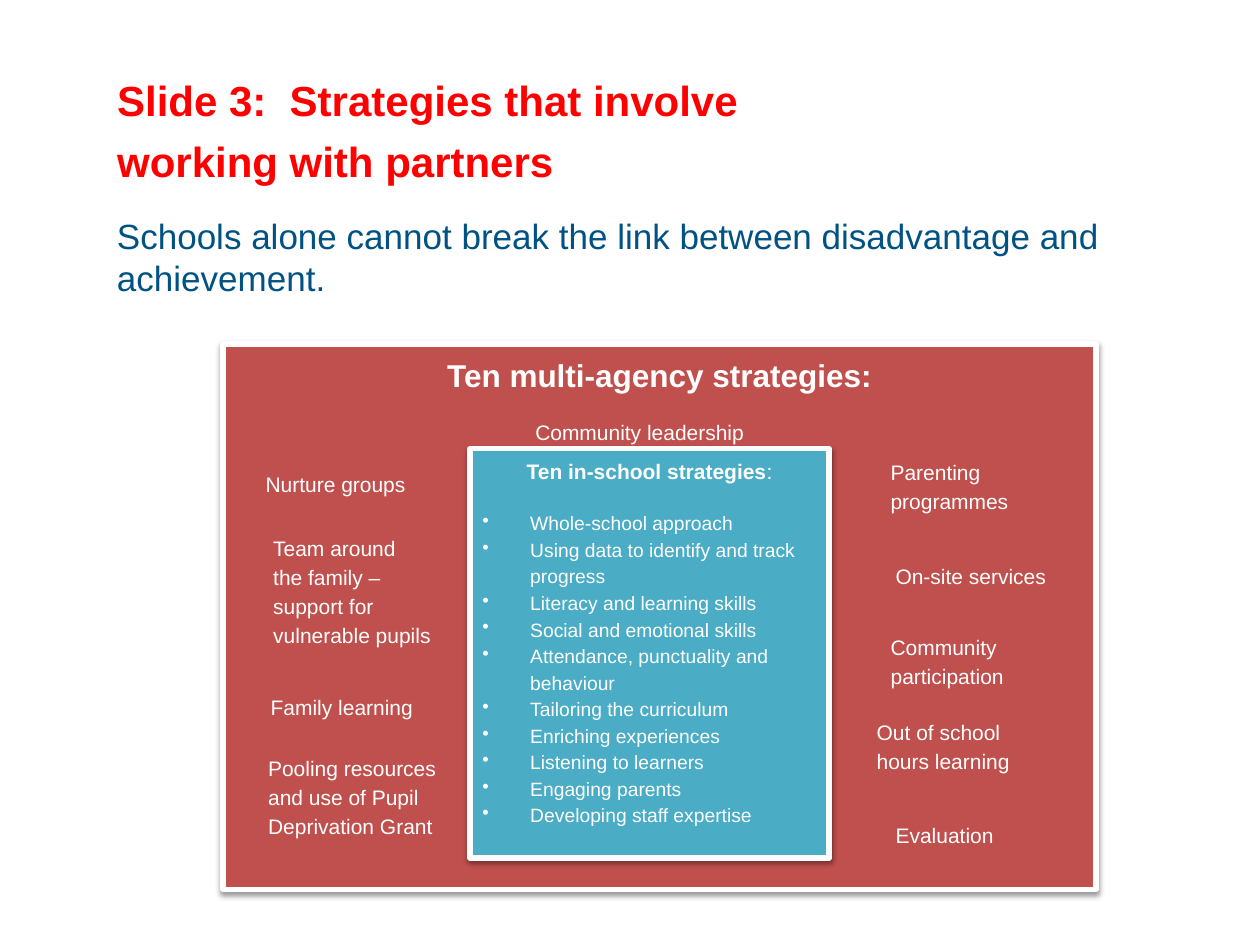
from dataclasses import dataclass

import pptx
import pptx.dml.color
import pptx.enum.shapes
import pptx.enum.text
import pptx.oxml
import pptx.oxml.ns
import pptx.util
from pptx.util import Inches, Pt

RGBColor = pptx.dml.color.RGBColor
Align = pptx.enum.text.PP_ALIGN

RED = RGBColor(0xFF, 0x00, 0x00)
NAVY = RGBColor(0x01, 0x52, 0x84)
BRICK = RGBColor(0xC0, 0x50, 0x4D)
TEAL = RGBColor(0x4B, 0xAC, 0xC6)
WHITE = RGBColor(0xFF, 0xFF, 0xFF)
FONT = "Arial"
LINE_SPACING = 1.15


@dataclass
class Box:
    left: float
    top: float
    width: float
    height: float


@dataclass
class Label:
    box: Box
    lines: tuple[str, ...]
    align: Align = Align.LEFT


LABELS = [
    Label(Box(4.15, 3.25, 1.9, 0.3), ("Community leadership",)),
    # Right-hand column
    Label(Box(6.97, 3.57, 1.5, 0.51), ("Parenting programmes",)),
    Label(Box(6.94, 4.39, 1.53, 0.56), ("On-site services",), Align.CENTER),
    Label(Box(6.97, 4.96, 1.48, 0.31), ("Community participation",)),
    Label(Box(6.86, 5.63, 1.5, 0.63), ("Out of school hours learning",)),
    Label(Box(7.01, 6.45, 1.2, 0.36), ("Evaluation",)),
    # Left-hand column
    Label(Box(2.01, 3.66, 1.56, 0.32), ("Nurture groups",)),
    Label(Box(2.07, 4.17, 1.49, 1.11),
          ("Team around", "the family – support for", "vulnerable pupils")),
    Label(Box(2.05, 5.43, 1.58, 0.39), ("Family learning",)),
    Label(Box(2.03, 5.92, 1.77, 0.68),
          ("Pooling resources and use of Pupil Deprivation Grant",)),
]

IN_SCHOOL_STRATEGIES = [
    "Whole-school approach",
    "Using data to identify and track progress",
    "Literacy and learning skills",
    "Social and emotional skills",
    "Attendance, punctuality and behaviour",
    "Tailoring the curriculum",
    "Enriching experiences",
    "Listening to learners",
    "Engaging parents",
    "Developing staff expertise",
]


def place(shape, box: Box) -> None:
    shape.left, shape.top = Inches(box.left), Inches(box.top)
    shape.width, shape.height = Inches(box.width), Inches(box.height)


def format_frame(frame) -> None:
    frame.word_wrap = True
    frame.auto_size = pptx.enum.text.MSO_AUTO_SIZE.NONE
    frame.vertical_anchor = pptx.enum.text.MSO_ANCHOR.TOP


def format_paragraph(paragraph, size: float, color: RGBColor,
                     bold: bool = False, align: Align = Align.LEFT) -> None:
    paragraph.alignment = align
    font = paragraph.font
    font.name, font.size, font.bold = FONT, Pt(size), bold
    font.color.rgb = color


def add_rectangle(slide, box: Box, fill: RGBColor):
    shape = slide.shapes.add_shape(
        pptx.enum.shapes.MSO_SHAPE.RECTANGLE, 0, 0, 0, 0)
    place(shape, box)
    shape.shadow.inherit = False
    shape.fill.solid()
    shape.fill.fore_color.rgb = fill
    shape.line.fill.background()
    format_frame(shape.text_frame)
    return shape


def add_panel(slide, box: Box, fill: RGBColor):
    """Add a rectangle with a white border and a soft shadow below it."""
    shape = add_rectangle(slide, box, fill)
    shape.line.color.rgb = WHITE
    shape.line.width = Pt(3)
    effects = shape._element.spPr.find(pptx.oxml.ns.qn("a:effectLst"))
    effects.append(pptx.oxml.parse_xml(
        f'<a:outerShdw {pptx.oxml.ns.nsdecls("a")} blurRad="{Pt(3.1)}" '
        f'dist="{Pt(1.6)}" dir="5400000" rotWithShape="0">'
        '<a:srgbClr val="000000"><a:alpha val="38000"/></a:srgbClr>'
        '</a:outerShdw>'))
    return shape


def add_label(slide, label: Label) -> None:
    frame = add_rectangle(slide, label.box, BRICK).text_frame
    frame.text = "\n".join(label.lines)
    for paragraph in frame.paragraphs:
        paragraph.line_spacing = LINE_SPACING
        format_paragraph(paragraph, 12, WHITE, align=label.align)


def add_bullet(frame, text: str) -> None:
    paragraph = frame.add_paragraph()
    paragraph.text = text
    paragraph.line_spacing = LINE_SPACING
    properties = paragraph._p.get_or_add_pPr()
    properties.set("marL", str(Inches(0.38)))
    properties.set("indent", str(Inches(-0.38)))
    properties.append(pptx.oxml.parse_xml(
        f'<a:buChar {pptx.oxml.ns.nsdecls("a")} char="•"/>'))
    format_paragraph(paragraph, 11, WHITE)


def main() -> None:
    presentation = pptx.Presentation()
    presentation.slide_width, presentation.slide_height = Inches(10), Inches(7.5)
    slide = presentation.slides.add_slide(presentation.slide_layouts[5])

    # Title
    title = slide.shapes.title
    place(title, Box(0.83, 0.54, 8.5, 1.05))
    format_frame(title.text_frame)
    title.text_frame.text = "Slide 3:  Strategies that involve\nworking with partners"
    for paragraph in title.text_frame.paragraphs:
        format_paragraph(paragraph, 24, RED, bold=True)
    title.text_frame.paragraphs[1].space_before = Pt(6)

    # Introductory statement
    statement = slide.shapes.add_textbox(0, 0, 0, 0)
    place(statement, Box(0.83, 1.65, 8.5, 0.8))
    format_frame(statement.text_frame)
    statement.text_frame.text = ("Schools alone cannot break the link between "
                                 "disadvantage and achievement.")
    format_paragraph(statement.text_frame.paragraphs[0], 20, NAVY)

    # Multi-agency panel and its labels
    outer = add_panel(slide, Box(1.77, 2.73, 6.93, 4.33), BRICK)
    heading = outer.text_frame.paragraphs[0]
    heading.text = "Ten multi-agency strategies:"
    heading.line_spacing = LINE_SPACING
    format_paragraph(heading, 18, WHITE, bold=True, align=Align.CENTER)
    for label in LABELS:
        add_label(slide, label)

    # In-school panel
    inner = add_panel(slide, Box(3.73, 3.56, 2.85, 3.25), TEAL).text_frame
    heading = inner.paragraphs[0]
    heading.line_spacing = LINE_SPACING
    heading.space_after = Pt(14)
    format_paragraph(heading, 12, WHITE, align=Align.CENTER)
    for text, bold in (("Ten in-school strategies", True), (":", False)):
        run = heading.add_run()
        run.text = text
        run.font.bold = bold
    for strategy in IN_SCHOOL_STRATEGIES:
        add_bullet(inner, strategy)

    presentation.save("out.pptx")


if __name__ == "__main__":
    main()
